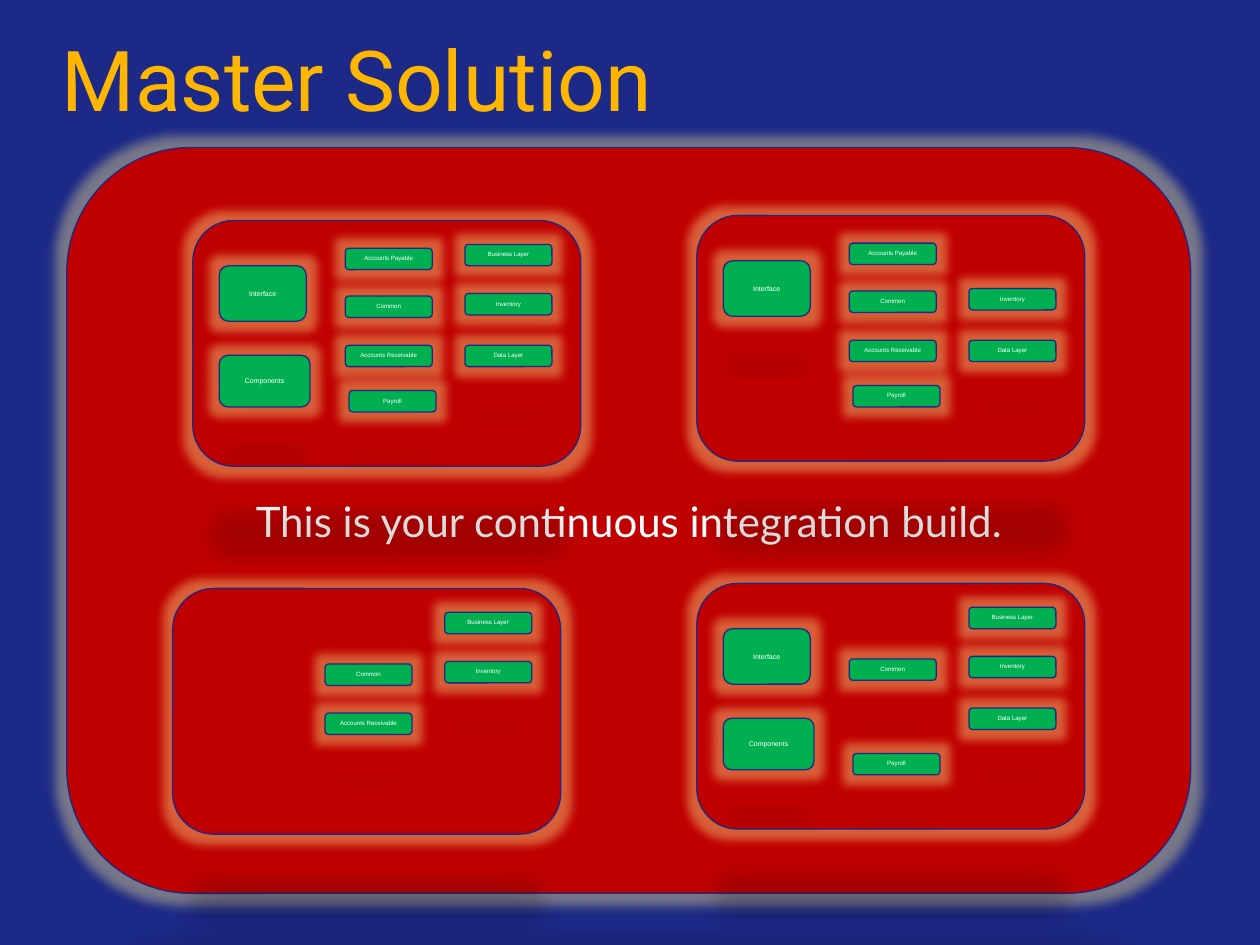
import pptx
import pptx.util
import pptx.dml.color
import pptx.enum.shapes
import pptx.enum.text
import pptx.oxml
import pptx.oxml.ns

Inch = pptx.util.Inches
Pt = pptx.util.Pt
Anchor = pptx.enum.text.MSO_ANCHOR

NAVY, RED, GREEN = "1C2986", "C00000", "00B050"
GOLD, WHITE, GLOW = "FFB601", "FFFFFF", "FFEE8C"

# Three columns inside a panel, in inches from its left edge
LEFT, MID, RIGHT = 0.21, 1.21, 2.16
PANEL = (3.08, 1.95)
SMALL = (0.69, 0.17)

# Module name: left and top inside the panel, then size
PARTS = {
    "Interface": (LEFT, 0.36, 0.69, 0.44),
    "Components": (LEFT, 1.07, 0.72, 0.41),
    "Accounts Payable": (MID, 0.22, *SMALL),
    "Common": (MID, 0.6, *SMALL),
    "Accounts Receivable": (MID, 0.99, *SMALL),
    "Payroll": (MID + 0.03, 1.35, *SMALL),
    "Business Layer": (RIGHT, 0.19, *SMALL),
    "Inventory": (RIGHT, 0.58, *SMALL),
    "Data Layer": (RIGHT, 0.99, *SMALL),
}

# Panel origin and the modules that it leaves out
PANELS = [
    (1.53, 1.75, ()),
    (5.53, 1.71, ("Components", "Business Layer")),
    (5.53, 4.63, ("Accounts Payable", "Accounts Receivable")),
    (1.37, 4.67, ("Interface", "Components", "Accounts Payable",
                  "Payroll", "Data Layer")),
]


def color(code):
    return pptx.dml.color.RGBColor.from_string(code)


def effects(shape):
    """Add a soft glow and a flattened shadow below the shape."""
    shape._element.spPr.append(pptx.oxml.parse_xml(
        f'<a:effectLst {pptx.oxml.ns.nsdecls("a")}>'
        f'<a:glow rad="{Pt(11)}"><a:srgbClr val="{GLOW}">'
        '<a:alpha val="40000"/></a:srgbClr></a:glow>'
        f'<a:outerShdw blurRad="{Pt(12)}" dist="{Pt(25)}" dir="5400000" '
        'sx="90000" sy="-19000" rotWithShape="0">'
        '<a:srgbClr val="000000"><a:alpha val="15000"/></a:srgbClr>'
        '</a:outerShdw></a:effectLst>'))


def box(shapes, area, fill):
    """Draw a rounded box with the shared outline and effects."""
    kind = pptx.enum.shapes.MSO_SHAPE.ROUNDED_RECTANGLE
    shape = shapes.add_shape(kind, *map(Inch, area))
    shape.fill.solid()
    shape.fill.fore_color.rgb = color(fill)
    shape.line.color.rgb = color(NAVY)
    shape.line.width = Pt(0.75)
    effects(shape)
    return shape


def style(para, font, size, code, space=None):
    para.font.name = font
    para.font.size = Pt(size)
    para.font.color.rgb = color(code)
    para.line_spacing = space


def label(shape, text, font, size, space=None):
    """Centre one line of white text in a box."""
    frame = shape.text_frame
    frame.word_wrap = False
    frame.vertical_anchor = Anchor.MIDDLE
    frame.margin_left = frame.margin_right = 0
    frame.margin_top = frame.margin_bottom = 0
    para = frame.paragraphs[0]
    para.text = text
    para.alignment = pptx.enum.text.PP_ALIGN.CENTER
    style(para, font, size, WHITE, space)


def panel(slide, left, top, skip):
    """Group a red panel with the modules that it holds."""
    group = slide.shapes.add_group_shape()
    box(group.shapes, (left, top, *PANEL), RED)
    for name, (x, y, wide, high) in PARTS.items():
        if name in skip:
            continue
        part = box(group.shapes, (left + x, top + y, wide, high), GREEN)
        if (wide, high) == SMALL:
            label(part, name, "Arial", 3.5, 0.8)
        else:
            label(part, name, "Arial", 4)


def heading(slide, text):
    title = slide.shapes.title
    title.left, title.top, title.width, title.height = map(
        Inch, (0.42, 0.25, 9.16, 0.82))
    frame = title.text_frame
    frame.word_wrap = True
    frame.vertical_anchor = Anchor.BOTTOM
    frame.margin_left = Inch(0.07)
    frame.margin_top = frame.margin_bottom = Inch(0.04)
    para = frame.paragraphs[0]
    para.text = text
    para.alignment = pptx.enum.text.PP_ALIGN.LEFT
    style(para, "Roboto", 48, GOLD, 0.9)


def main():
    deck = pptx.Presentation()
    deck.slide_width, deck.slide_height = Inch(10), Inch(7.5)
    slide = deck.slides.add_slide(deck.slide_layouts[5])
    slide.background.fill.solid()
    slide.background.fill.fore_color.rgb = color(NAVY)

    # Title and the build that holds all solutions
    heading(slide, "Master Solution")
    build = box(slide.shapes, (0.53, 1.17, 8.92, 5.92), RED)
    label(build, "This is your continuous integration build.", "Lato", 24)

    # Solutions
    for left, top, skip in PANELS:
        panel(slide, left, top, skip)

    deck.save("out.pptx")


if __name__ == "__main__":
    main()
